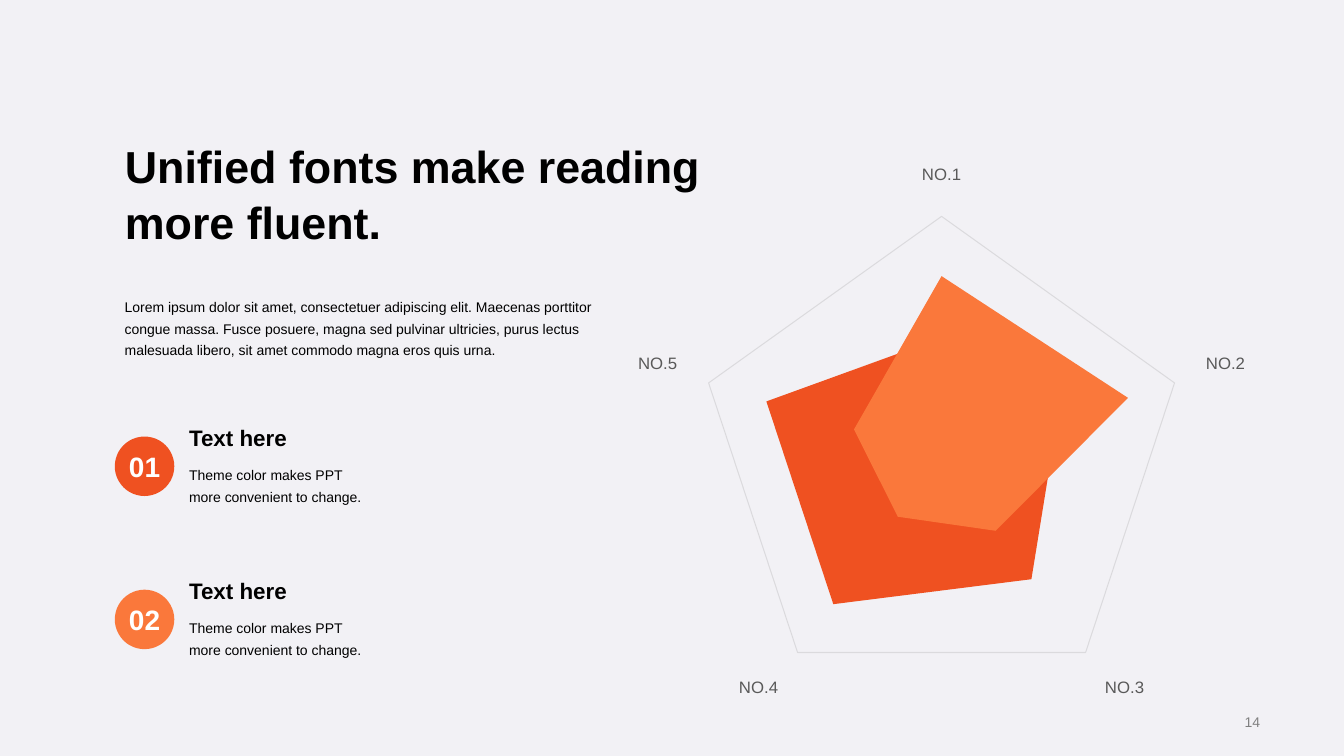
from lxml import etree
from pptx import Presentation
from pptx import util as u
from pptx.chart import data
from pptx.dml import color
from pptx.enum import chart as charts, shapes, text
from pptx.oxml import ns

FONT = "Arial"
DARK_ORANGE = "EF5121"
LIGHT_ORANGE = "FA783B"
CATEGORIES = ["NO.1", "NO.2", "NO.3", "NO.4", "NO.5"]
SERIES = [
    ("Series 1", [94, 100, 47, 38, 47], LIGHT_ORANGE),
    ("Series 2", [62, 62, 78, 94, 94], DARK_ORANGE),
]
RING_VALUE = 125
PLOT_LAYOUT = {"x": 0.21, "y": 0.07, "w": 0.59, "h": 0.88}
ITEMS = [("01", DARK_ORANGE), ("02", LIGHT_ORANGE)]
ITEM_PITCH = 109.4


def rgb(value):
    return color.RGBColor.from_string(value)


def points(*lengths):
    return [u.Pt(length) for length in lengths]


def write(shape, content, size=10, ink="000000", bold=False, spacing=1.0,
          align=text.PP_ALIGN.LEFT, anchor=text.MSO_ANCHOR.TOP, wrap=True):
    frame = shape.text_frame
    frame.word_wrap = wrap
    frame.auto_size = text.MSO_AUTO_SIZE.NONE
    frame.vertical_anchor = anchor
    frame.text = content
    for para in frame.paragraphs:
        para.alignment = align
        para.line_spacing = spacing
        for span in para.runs:
            span.font.name = FONT
            span.font.size = u.Pt(size)
            span.font.bold = bold
            span.font.color.rgb = rgb(ink)


def add_text(page, box, content, **style):
    write(page.shapes.add_textbox(*points(*box)), content, **style)


def add_heading(page, box):
    left, top, width, height = box
    title = page.shapes.title
    title.left, title.top, title.width, title.height = points(left, top, width, 85)
    write(title, "Unified fonts make reading\nmore fluent.",
          size=32, bold=True, spacing=1.05)
    add_text(page, (left, top + 112.3, 363, height - 112.3),
             "Lorem ipsum dolor sit amet, consectetuer adipiscing elit. "
             "Maecenas porttitor congue massa. Fusce posuere, magna sed pulvinar "
             "ultricies, purus lectus malesuada libero, sit amet commodo magna "
             "eros quis urna.", spacing=1.3)


def add_item(page, box, number, fill):
    left, top, width, height = box
    badge = page.shapes.add_shape(shapes.MSO_SHAPE.ROUNDED_RECTANGLE,
                                  *points(left, top + 13, 42.5, 42.5))
    badge.adjustments[0] = 0.5
    badge.shadow.inherit = False
    badge.fill.solid()
    badge.fill.fore_color.rgb = rgb(fill)
    badge.line.fill.background()
    write(badge, number, size=20, ink="FFFFFF", bold=True, wrap=False,
          align=text.PP_ALIGN.CENTER, anchor=text.MSO_ANCHOR.MIDDLE)
    text_left, text_width = left + 46, width - 46
    add_text(page, (text_left, top, text_width, 26.6), "Text here",
             size=16, bold=True, anchor=text.MSO_ANCHOR.BOTTOM)
    add_text(page, (text_left, top + 27.4, text_width, height - 27.4),
             "Theme color makes PPT more convenient to change.", spacing=1.3)


def place_plot(chart):
    plot_area = chart.element.xpath("c:chart/c:plotArea")[0]
    for old_layout in plot_area.xpath("c:layout"):
        plot_area.remove(old_layout)
    layout = etree.Element(ns.qn("c:layout"))
    plot_area.insert(0, layout)
    manual = etree.SubElement(layout, ns.qn("c:manualLayout"))
    settings = {"layoutTarget": "inner", "xMode": "edge", "yMode": "edge", **PLOT_LAYOUT}
    for name, value in settings.items():
        etree.SubElement(manual, ns.qn(f"c:{name}")).set("val", str(value))


def add_radar(page, box):
    chart_data = data.CategoryChartData()
    chart_data.categories = CATEGORIES
    for name, values, fill in SERIES:
        chart_data.add_series(name, values)
    chart = page.shapes.add_chart(charts.XL_CHART_TYPE.RADAR_FILLED,
                                  *points(*box), chart_data).chart
    chart.has_legend = False
    chart.has_title = False
    chart.font.name = FONT
    chart.font.size = u.Pt(10)
    chart.font.color.rgb = rgb("000000")
    for series, (name, values, fill) in zip(chart.plots[0].series, SERIES):
        series.format.fill.solid()
        series.format.fill.fore_color.rgb = rgb(fill)
        series.format.line.fill.background()

    category_axis = chart.category_axis
    category_axis.has_major_gridlines = False
    category_axis.major_tick_mark = charts.XL_TICK_MARK.NONE
    category_axis.format.line.color.rgb = rgb("D9D9D9")
    category_axis.format.line.width = u.Pt(0.75)
    labels = category_axis.tick_labels.font
    labels.name = FONT
    labels.size = u.Pt(12)
    labels.color.rgb = rgb("595959")

    value_axis = chart.value_axis
    value_axis.visible = False
    value_axis.minimum_scale = 0
    value_axis.maximum_scale = RING_VALUE
    value_axis.major_unit = RING_VALUE
    value_axis.has_major_gridlines = True
    ring = value_axis.major_gridlines.format.line
    ring.color.rgb = rgb("808080")
    ring.width = u.Pt(0.75)
    ring_color = value_axis._element.xpath("c:majorGridlines//a:srgbClr")[0]
    etree.SubElement(ring_color, ns.qn("a:alpha")).set("val", "20000")
    place_plot(chart)


def build_page(deck):
    page = deck.slides.add_slide(deck.slide_layouts[5])
    page.background.fill.solid()
    page.background.fill.fore_color.rgb = rgb("F2F1F5")
    add_radar(page, (373, 118.8, 593.3, 401.8))
    add_heading(page, (82, 93.6, 817, 164.9))
    for index, (number, fill) in enumerate(ITEMS):
        add_item(page, (82, 298.8 + index * ITEM_PITCH, 185, 64.8), number, fill)
    add_text(page, (697.7, 506.9, 209.5, 17.3), "14", ink="808080",
             align=text.PP_ALIGN.RIGHT, anchor=text.MSO_ANCHOR.MIDDLE)


def main():
    deck = Presentation()
    deck.slide_width, deck.slide_height = points(960, 540)
    build_page(deck)
    deck.save("out.pptx")


if __name__ == "__main__":
    main()
